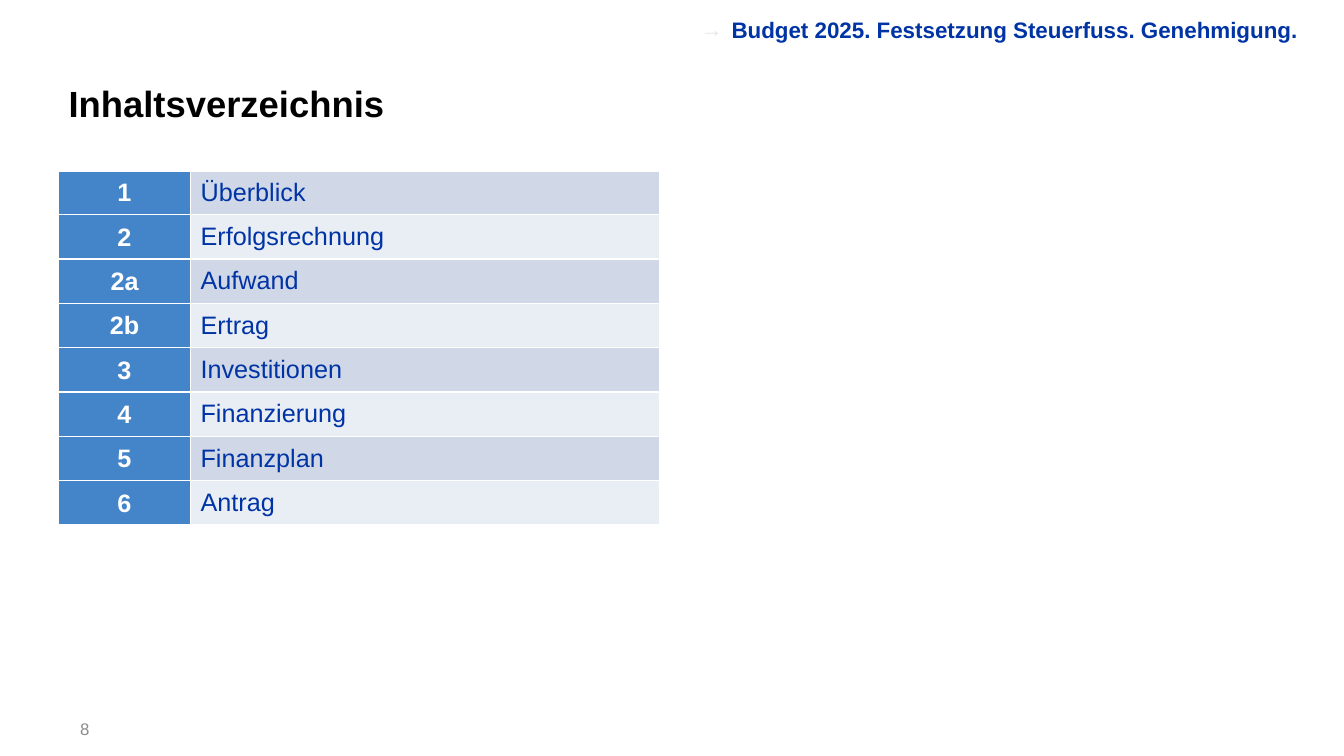
from typing import NamedTuple

from lxml.etree import SubElement
from pptx import Presentation
from pptx.dml.color import RGBColor
from pptx.enum.text import MSO_ANCHOR as Anchor, MSO_AUTO_SIZE as AutoSize, PP_ALIGN as Align
from pptx.oxml.ns import qn
from pptx.util import Inches, Pt

FONT = "Arial"
BLUE = "0034A5"
WHITE = "FFFFFF"
NUMBER_FILL = "4484C9"
BAND_FILLS = ("D0D8E8", "E9EDF4")
LEFT = 0.58
CONTENT_WIDTH = 12.39
COLUMN_WIDTHS = (1.31, 4.65)
ROW_HEIGHT = 0.44


class Chapter(NamedTuple):
    number: str
    title: str


CHAPTERS = (
    Chapter("1", "Überblick"),
    Chapter("2", "Erfolgsrechnung"),
    Chapter("2a", "Aufwand"),
    Chapter("2b", "Ertrag"),
    Chapter("3", "Investitionen"),
    Chapter("4", "Finanzierung"),
    Chapter("5", "Finanzplan"),
    Chapter("6", "Antrag"),
)


def color(value: str) -> RGBColor:
    return RGBColor.from_string(value)


def write(frame, text: str, *, size: float, ink: str, bold: bool = False,
          align=Align.LEFT, anchor=Anchor.MIDDLE, margins=(0.1, 0.05, 0.1, 0.05)):
    """Fill a text frame or table cell; margins are left, top, right, bottom."""
    frame.vertical_anchor = anchor
    frame.margin_left, frame.margin_top, frame.margin_right, frame.margin_bottom = map(Inches, margins)
    frame.text = text
    paragraph = getattr(frame, "text_frame", frame).paragraphs[0]
    paragraph.alignment = align
    font = paragraph.runs[0].font
    font.name, font.size, font.bold = FONT, Pt(size), bold
    font.color.rgb = color(ink)
    return paragraph


def add_text_box(slide, left: float, top: float, width: float, height: float):
    box = slide.shapes.add_textbox(*map(Inches, (left, top, width, height)))
    box.text_frame.word_wrap = True
    return box.text_frame


def add_bullet(paragraph, symbol: str, ink: str, indent: float) -> None:
    properties = paragraph._p.get_or_add_pPr()
    properties.set("marL", str(Inches(indent)))
    properties.set("indent", str(Inches(-indent)))
    bullet_color = SubElement(properties, qn("a:buClr"))
    SubElement(bullet_color, qn("a:srgbClr"), val=ink)
    SubElement(properties, qn("a:buFont"), typeface=FONT)
    SubElement(properties, qn("a:buChar"), char=symbol)


def style_cell(cell, fill: str, top_border: float) -> None:
    properties = cell._tc.get_or_add_tcPr()
    for side, width in (("L", 1), ("R", 1), ("T", top_border), ("B", 1)):
        border = SubElement(properties, qn(f"a:ln{side}"), w=str(Pt(width)))
        border_fill = SubElement(border, qn("a:solidFill"))
        SubElement(border_fill, qn("a:srgbClr"), val=WHITE)
    cell.fill.solid()
    cell.fill.fore_color.rgb = color(fill)


def add_contents_table(slide, left: float, top: float) -> None:
    size = (sum(COLUMN_WIDTHS), ROW_HEIGHT * len(CHAPTERS))
    table = slide.shapes.add_table(
        len(CHAPTERS), len(COLUMN_WIDTHS), *map(Inches, (left, top, *size))).table
    table.first_row = False
    table.horz_banding = False
    for column, width in zip(table.columns, COLUMN_WIDTHS):
        column.width = Inches(width)
    for index, (row, chapter) in enumerate(zip(table.rows, CHAPTERS)):
        row.height = Inches(ROW_HEIGHT)
        number_cell, title_cell = row.cells
        top_border = 3 if index == 0 else 1
        style_cell(number_cell, NUMBER_FILL, top_border)
        style_cell(title_cell, BAND_FILLS[index % 2], top_border)
        write(number_cell, chapter.number, size=18, ink=WHITE, bold=True,
              align=Align.CENTER, margins=(0.01, 0.01, 0.01, 0))
        write(title_cell, chapter.title, size=18, ink=BLUE)


def main() -> None:
    presentation = Presentation()
    presentation.slide_width = Inches(13.33)
    presentation.slide_height = Inches(7.5)
    slide = presentation.slides.add_slide(presentation.slide_layouts.get_by_name("Title Only"))

    # Page number
    write(add_text_box(slide, LEFT, 7.11, 0.52, 0.24), "8", size=12, ink="8C8C8C", align=Align.CENTER)

    # Title
    title = slide.shapes.title
    title.left, title.top, title.width, title.height = map(Inches, (LEFT, 0.35, CONTENT_WIDTH, 0.94))
    title.text_frame.auto_size = AutoSize.NONE
    heading = write(title.text_frame, "Inhaltsverzeichnis", size=26, ink="000000",
                    bold=True, anchor=Anchor.BOTTOM)
    heading.line_spacing = 0.9

    # Table of contents
    add_contents_table(slide, LEFT, 1.69)

    # Topic line
    topic = write(add_text_box(slide, LEFT, 0.1, CONTENT_WIDTH, 0.58),
                  "Budget 2025. Festsetzung Steuerfuss. Genehmigung.", size=16, ink=BLUE, bold=True,
                  align=Align.RIGHT, anchor=Anchor.TOP, margins=(0.1, 0.06, 0.1, 0.05))
    add_bullet(topic, "→", "E7E6E6", 0.31)

    presentation.save("out.pptx")


if __name__ == "__main__":
    main()
